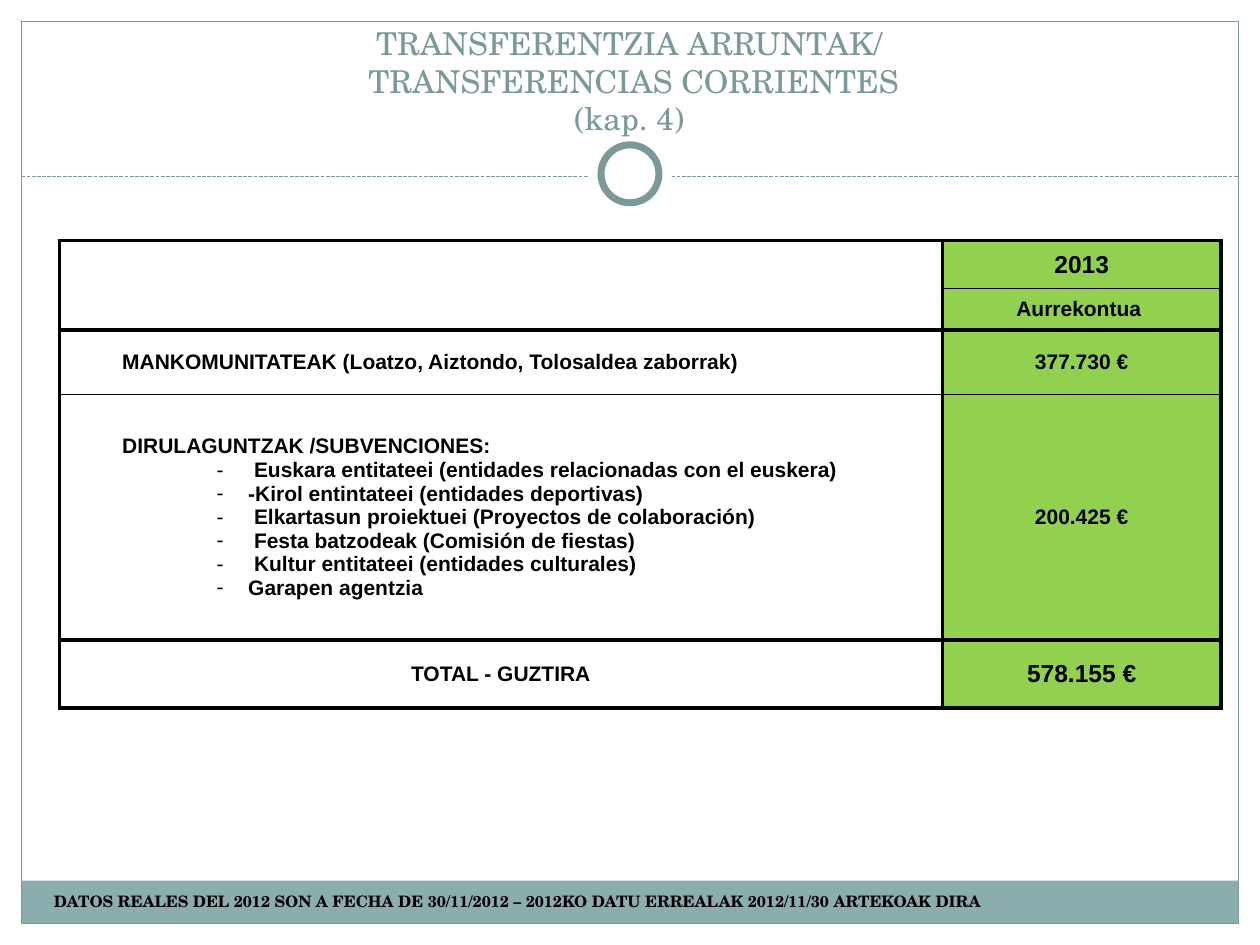
"""Builds a budget slide on current transfers: a title, a table and a footer band."""
from dataclasses import dataclass

from lxml import etree
from pptx import Presentation
from pptx.dml.color import RGBColor
from pptx.enum.dml import MSO_LINE
from pptx.enum.shapes import MSO_CONNECTOR, MSO_SHAPE
from pptx.enum.text import MSO_ANCHOR, PP_ALIGN
from pptx.oxml.ns import qn
from pptx.util import Inches, Pt

RECTANGLE, OVAL = MSO_SHAPE.RECTANGLE, MSO_SHAPE.OVAL
STRAIGHT, DASH = MSO_CONNECTOR.STRAIGHT, MSO_LINE.SQUARE_DOT
LEFT, CENTER = PP_ALIGN.LEFT, PP_ALIGN.CENTER
TOP, MIDDLE, BOTTOM = MSO_ANCHOR.TOP, MSO_ANCHOR.MIDDLE, MSO_ANCHOR.BOTTOM

WIDTH, HEIGHT = 10, 7.5
MARGIN = 0.17
RULE_Y = 1.4
SERIF, SANS = "TeX Gyre Schola", "Arial"
TEAL, BAND, GREEN, WHITE, BLACK = "7C999A", "8CADAE", "92D050", "FFFFFF", "000000"
THICK, THIN = 2.25, 0.5
COLUMN_WIDTHS = (7.01, 2.21)
ROW_HEIGHTS = (0.38, 0.33, 0.51, 1.95, 0.54)
THIN_RULES = {(1, 1), (3, 0), (3, 1)}


@dataclass
class Line:
    """One paragraph of a table cell."""
    text: str
    size: float = 12
    align: PP_ALIGN = CENTER
    level: int = 0
    left: float = 0
    bullet: str = ""


@dataclass
class Decoration:
    """A preset shape of the slide's frame."""
    preset: MSO_SHAPE
    box: tuple[float, float, float, float]
    fill: str = ""
    line_width: float = 0


def heading(text: str) -> Line:
    """Describe an indented row heading."""
    return Line(text, align=LEFT, level=1, left=0.5)


def item(text: str) -> Line:
    """Describe a dashed list entry."""
    return Line(text, align=LEFT, level=3, left=1.5, bullet="-")


def circle(diameter: float, line_width: float = 0) -> Decoration:
    """Describe a white circle centred on the dashed rule."""
    box = ((WIDTH - diameter) / 2, RULE_Y - 0.02 - diameter / 2, diameter, diameter)
    return Decoration(OVAL, box, WHITE, line_width)


DECORATIONS = [
    Decoration(RECTANGLE, (MARGIN, 6.99, WIDTH - 2 * MARGIN, 0.34), BAND),
    Decoration(RECTANGLE, (MARGIN, MARGIN, WIDTH - 2 * MARGIN, HEIGHT - 2 * MARGIN),
               line_width=0.75),
]
RINGS = [circle(0.67), circle(0.46, 4)]

ENTRIES = [
    " Euskara entitateei (entidades relacionadas con el euskera)",
    "-Kirol entintateei (entidades deportivas)",
    " Elkartasun proiektuei (Proyectos de colaboración)",
    " Festa batzodeak (Comisión de fiestas)",
    " Kultur entitateei (entidades culturales)",
    "Garapen agentzia",
]
ROWS = [
    ([], [Line("2013", 14)]),
    ([], [Line("Aurrekontua ")]),
    ([heading("MANKOMUNITATEAK (Loatzo, Aiztondo, Tolosaldea zaborrak)")],
     [Line("377.730 €")]),
    ([heading("DIRULAGUNTZAK /SUBVENCIONES:"), *map(item, ENTRIES)],
     [Line("200.425 €")]),
    ([Line("TOTAL - GUZTIRA")], [Line("578.155 €", 14)]),
]


def color(value: str) -> RGBColor:
    """Turn a hex string into a colour."""
    return RGBColor.from_string(value)


def apply(target, values: dict) -> None:
    """Set every attribute named in a dict of format values."""
    for name, value in values.items():
        setattr(target, name, value)


def style_font(font, name: str, size: float, hue: str, bold: bool) -> None:
    """Format a font."""
    apply(font, {"name": name, "size": Pt(size), "bold": bold})
    font.color.rgb = color(hue)


def place(shape, box: tuple[float, float, float, float]) -> None:
    """Move and size a shape, in inches."""
    apply(shape, dict(zip(("left", "top", "width", "height"), map(Inches, box))))


def draw_decoration(slide, part: Decoration) -> None:
    """Draw one preset shape."""
    shape = slide.shapes.add_shape(part.preset, *map(Inches, part.box))
    shape.shadow.inherit = False
    if part.fill:
        shape.fill.solid()
        shape.fill.fore_color.rgb = color(part.fill)
    else:
        shape.fill.background()
    if part.line_width:
        shape.line.color.rgb = color(TEAL)
        shape.line.width = Pt(part.line_width)
    else:
        shape.line.fill.background()


def draw_rule(slide) -> None:
    """Draw the dashed rule under the title."""
    ends = map(Inches, (MARGIN, RULE_Y, WIDTH - MARGIN, RULE_Y))
    rule = slide.shapes.add_connector(STRAIGHT, *ends)
    rule.line.color.rgb = color(TEAL)
    apply(rule.line, {"width": Pt(0.75), "dash_style": DASH})
    etree.SubElement(rule._element.spPr, qn("a:effectLst"))


def fill_title(slide, text: str) -> None:
    """Write the title and bring it in front of the rings."""
    title = slide.shapes.title
    place(title, (0.33, 0.31, 9.33, 0.83))
    frame = title.text_frame
    frame.text = text
    apply(frame, {"vertical_anchor": BOTTOM, "word_wrap": True})
    frame.paragraphs[0].alignment = CENTER
    for run in frame.paragraphs[0].runs:
        style_font(run.font, SERIF, 18, TEAL, False)
    slide.shapes._spTree.append(title._element)


def draw_footer(slide, text: str) -> None:
    """Write the note on the footer band."""
    frame = slide.shapes.add_textbox(*map(Inches, (0.33, 7.03, 7.87, 0.4))).text_frame
    apply(frame, {"word_wrap": True, "vertical_anchor": TOP, "text": text})
    style_font(frame.paragraphs[0].runs[0].font, SERIF, 9, BLACK, True)


def write_line(paragraph, line: Line) -> None:
    """Write one paragraph of a cell."""
    apply(paragraph, {"alignment": line.align, "level": line.level})
    properties = paragraph._p.get_or_add_pPr()
    properties.set("marL", str(Inches(line.left)))
    properties.set("indent", str(Inches(-0.25 if line.bullet else 0)))
    if line.bullet:
        etree.SubElement(properties, qn("a:buFont"), typeface=SANS)
        etree.SubElement(properties, qn("a:buChar"), char=line.bullet)
    run = paragraph.add_run()
    run.text = line.text
    style_font(run.font, SANS, line.size, BLACK, True)


def draw_borders(cell, row: int, column: int) -> None:
    """Give a cell its four borders."""
    top = THIN if (row, column) in THIN_RULES else THICK
    bottom = THIN if (row + 1, column) in THIN_RULES else THICK
    widths = {"a:lnL": THICK, "a:lnR": THICK, "a:lnT": top, "a:lnB": bottom}
    properties = cell._tc.get_or_add_tcPr()
    for position, (tag, width) in enumerate(widths.items()):
        border = etree.Element(qn(tag), w=str(Pt(width)))
        solid = etree.SubElement(border, qn("a:solidFill"))
        etree.SubElement(solid, qn("a:srgbClr"), val=BLACK)
        properties.insert(position, border)


def draw_cell(cell, row: int, column: int, lines: list[Line]) -> None:
    """Format a cell and write its lines."""
    sides = ("margin_left", "margin_top", "margin_right", "margin_bottom")
    apply(cell, {"vertical_anchor": MIDDLE, **dict.fromkeys(sides, 0)})
    if column:
        cell.fill.solid()
        cell.fill.fore_color.rgb = color(GREEN)
    else:
        cell.fill.background()
    draw_borders(cell, row, column)
    for index, line in enumerate(lines):
        frame = cell.text_frame
        write_line(frame.add_paragraph() if index else frame.paragraphs[0], line)


def draw_budget(slide) -> None:
    """Draw the budget table."""
    box = (0.47, 1.91, sum(COLUMN_WIDTHS), sum(ROW_HEIGHTS))
    size = len(ROW_HEIGHTS), len(COLUMN_WIDTHS)
    table = slide.shapes.add_table(*size, *map(Inches, box)).table
    apply(table, {"first_row": False, "horz_banding": False})
    for column, width in zip(table.columns, COLUMN_WIDTHS):
        column.width = Inches(width)
    for row, height in zip(table.rows, ROW_HEIGHTS):
        row.height = Inches(height)
    for row, cells in enumerate(ROWS):
        for column, lines in enumerate(cells):
            draw_cell(table.cell(row, column), row, column, lines)
    table.cell(0, 0).merge(table.cell(1, 0))


def main() -> None:
    """Build and save the slide."""
    deck = Presentation()
    apply(deck, {"slide_width": Inches(WIDTH), "slide_height": Inches(HEIGHT)})
    slide = deck.slides.add_slide(deck.slide_layouts[5])
    for part in DECORATIONS:
        draw_decoration(slide, part)
    draw_rule(slide)
    for ring in RINGS:
        draw_decoration(slide, ring)
    draw_footer(slide, "DATOS REALES DEL 2012 SON A FECHA DE 30/11/2012 – "
                       "2012KO DATU ERREALAK 2012/11/30 ARTEKOAK DIRA")
    fill_title(slide, "TRANSFERENTZIA ARRUNTAK/\v TRANSFERENCIAS CORRIENTES\v(kap. 4)")
    draw_budget(slide)
    deck.save("out.pptx")


if __name__ == "__main__":
    main()
